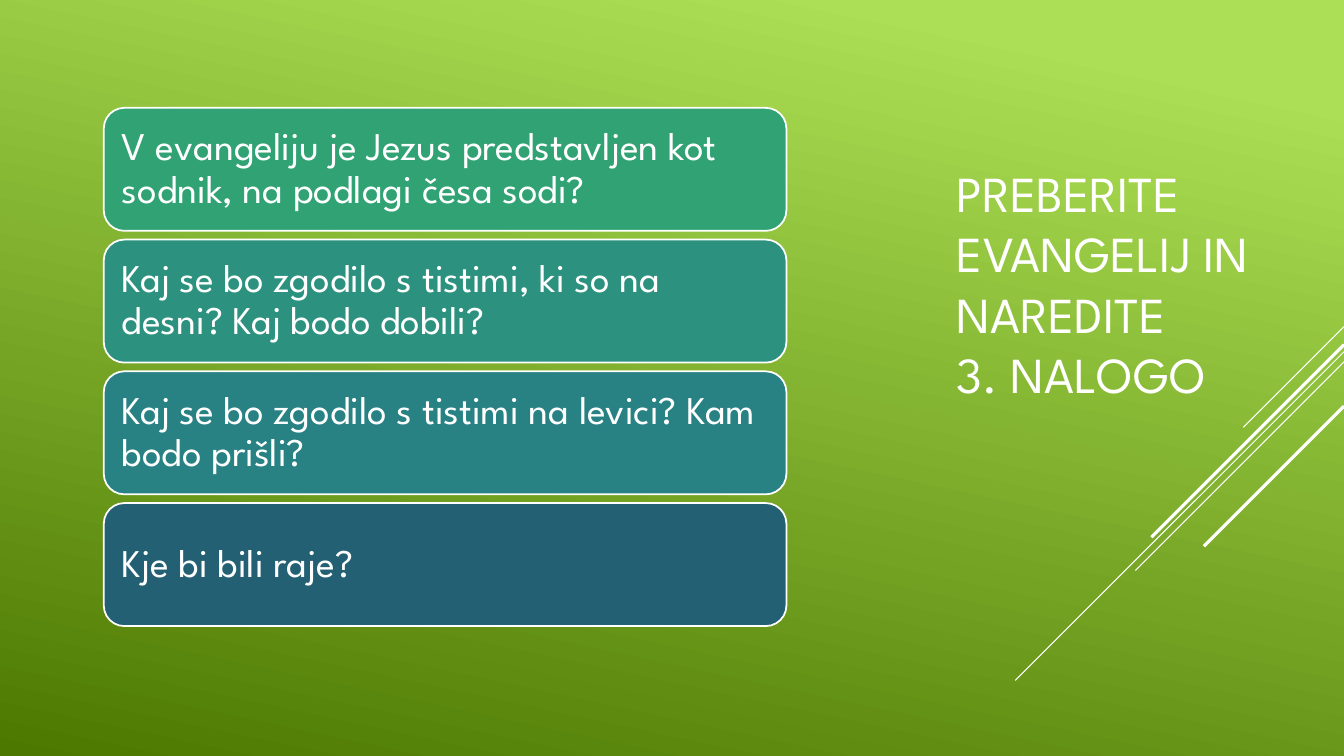
from pptx import Presentation
from pptx import util as u
from pptx.dml.color import RGBColor
from pptx.enum import shapes, text
from pptx.oxml.ns import qn
from lxml import etree

FONT = "League Spartan"
WHITE = "FFFFFF"


def paint(color, hue):
    color.rgb = RGBColor.from_string(hue)


def write(par, words, size):
    run = par.add_run()
    run.text = words
    run.font.name = FONT
    run.font.size = u.Pt(size)
    paint(run.font.color, WHITE)


deck = Presentation()
deck.slide_width = u.Inches(13.33)
deck.slide_height = u.Inches(7.5)
slide = deck.slides.add_slide(deck.slide_layouts[5])

# Green gradient background
back = slide.background.fill
back.gradient()
back.gradient_angle = 258
for stop, (pos, hue) in zip(back.gradient_stops, [(0.1, "ACDF55"), (1, "4C7800")]):
    stop.position = pos
    paint(stop.color, hue)

# Title on the right
title = slide.shapes.title
title.left, title.top = u.Inches(9.39), u.Inches(1.03)
title.width, title.height = u.Inches(3.33), u.Inches(3.55)
frame = title.text_frame
frame.word_wrap = True
frame.auto_size = text.MSO_AUTO_SIZE.NONE
frame.vertical_anchor = text.MSO_ANCHOR.MIDDLE
par = frame.paragraphs[0]
par.alignment = text.PP_ALIGN.LEFT
write(par, "PREBERITE EVANGELIJ IN NAREDITE ", 36)
par.add_line_break()
write(par, "3. NALOGO", 36)

# Diagonal lines at 45 degrees from the right edge: start height, reach, weight
edge = deck.slide_width
for top, reach, weight in [(3.24, 1, 0.75), (3.49, 3.26, 0.75), (3.59, 2.07, 0.75),
                           (3.42, 1.91, 2.25), (4.03, 1.39, 2.25)]:
    ray = slide.shapes.add_connector(
        shapes.MSO_CONNECTOR.STRAIGHT, edge, u.Inches(top),
        edge - u.Inches(reach), u.Inches(top + reach))
    ray.line.width = u.Pt(weight)
    paint(ray.line.color, WHITE)
    etree.SubElement(ray._element.spPr, qn("a:effectLst"))

# Stack of question cards
cards = [
    ("31A274", "V evangeliju je Jezus predstavljen kot sodnik, na podlagi česa sodi?"),
    ("2C927F", "Kaj se bo zgodilo s tistimi, ki so na desni? Kaj bodo dobili?"),
    ("288183", "Kaj se bo zgodilo s tistimi na levici? Kam bodo prišli?"),
    ("236073", "Kje bi bili raje?"),
]
left, top, wide, high, step = 1.03, 1.07, 6.77, 1.22, 1.307
for row, (hue, words) in enumerate(cards):
    card = slide.shapes.add_shape(
        shapes.MSO_SHAPE.ROUNDED_RECTANGLE, u.Inches(left),
        u.Inches(top + row * step), u.Inches(wide), u.Inches(high))
    card.shadow.inherit = False
    card.fill.solid()
    paint(card.fill.fore_color, hue)
    card.line.width = u.Pt(1.25)
    paint(card.line.color, WHITE)
    frame = card.text_frame
    frame.word_wrap = True
    frame.vertical_anchor = text.MSO_ANCHOR.MIDDLE
    # The preset insets its own text area by 0.06 inch
    frame.margin_left = frame.margin_right = u.Inches(0.12)
    frame.margin_top = frame.margin_bottom = u.Inches(0.12)
    par = frame.paragraphs[0]
    par.alignment = text.PP_ALIGN.LEFT
    par.line_spacing = 0.9
    write(par, words, 28)

deck.save("out.pptx")
